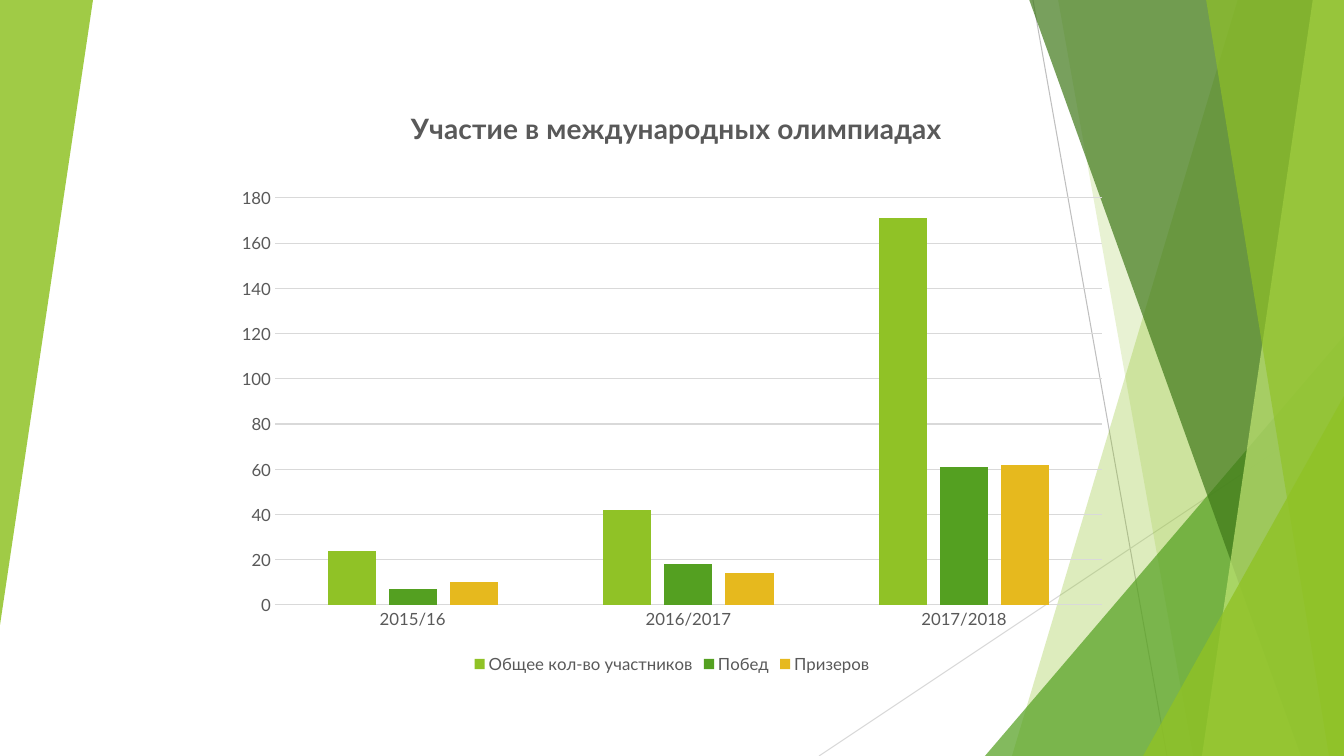
from lxml.etree import SubElement
from pptx import Presentation
from pptx.chart.data import CategoryChartData
from pptx.dml.color import RGBColor
from pptx.enum.chart import XL_CHART_TYPE, XL_LEGEND_POSITION, XL_TICK_MARK
from pptx.enum.shapes import MSO_CONNECTOR, MSO_SHAPE
from pptx.oxml.ns import qn
from pptx.util import Pt

TITLE = "Участие в международных олимпиадах"
YEARS = ["2015/16", "2016/2017", "2017/2018"]
SERIES = [
    ("Общее кол-во участников", "lime", [24, 42, 171]),
    ("Побед", "green", [7, 18, 61]),
    ("Призеров", "gold", [10, 14, 62]),
]
COLORS = {
    "lime": "90C226", "green": "54A021", "gold": "E6B91E",
    "forest": "3F7819", "pale": "C0E474", "text": "595959",
    "grid": "D9D9D9", "ray": "BFBFBF",
}
FONT = "Lato"
WIDTH, HEIGHT = 1344, 756
SCALE = 12192000 / WIDTH

RAYS = [((1033, 0), (1167, HEIGHT), "ray"), ((WIDTH, 406), (819, HEIGHT), "grid")]
FACETS = [
    ("band", (1238, 1012), "lime", 30),
    ("band", (1058, 1193), "lime", 20),
    ("triangle", (985, 336, 359, 420, 0), "green", 72),
    ("band", (1029, 1301), "forest", 70),
    ("band", (1313, 1202), "pale", 70),
    ("band", (1206, 1329), "lime", 65),
    ("triangle", (1143, 396, 201, 360, 0), "lime", 80),
    ("triangle", (0, 0, 93, 625, 180), "lime", 85),
]
CHART_BOX = (224, 80, 896, 598)
PLOT_BOX = (275, 198, 827, 407)
TITLE_CORNER = (406, 103)


def emu(*lengths):
    return [round(length * SCALE) for length in lengths]


def color(name):
    return RGBColor.from_string(COLORS[name])


def style_font(font, size=12, bold=False):
    font.name, font.size, font.bold = FONT, Pt(size), bold
    font.color.rgb = color("text")


def write_text(frame, text, **style):
    span = frame.paragraphs[0].add_run()
    span.text = text
    style_font(span.font, **style)


def style_line(line, name):
    line.color.rgb = color(name)
    line.width = Pt(0.75)


def add_ray(page, start, end, name):
    ray = page.shapes.add_connector(MSO_CONNECTOR.STRAIGHT, *emu(*start, *end))
    style_line(ray.line, name)
    SubElement(ray._element.spPr, qn("a:effectLst"))


def add_facet(page, kind, geometry, name, opacity):
    if kind == "band":
        top, bottom = geometry
        builder = page.shapes.build_freeform(top, -1, scale=SCALE)
        builder.add_line_segments([(WIDTH, -1), (WIDTH, HEIGHT), (bottom, HEIGHT)])
        facet = builder.convert_to_shape()
    else:
        *box, rotation = geometry
        facet = page.shapes.add_shape(MSO_SHAPE.ISOSCELES_TRIANGLE, *emu(*box))
        facet.adjustments[0] = 1
        facet.rotation = rotation
    facet.shadow.inherit = False
    facet.line.fill.background()
    facet.fill.solid()
    facet.fill.fore_color.rgb = color(name)
    tint = facet._element.spPr.find(qn("a:solidFill"))[0]
    SubElement(tint, qn("a:alpha"), val=str(opacity * 1000))


def place(element, position, inner=False):
    left, top, width, height = CHART_BOX
    layout = element.find(qn("c:layout"))
    if layout is None:
        layout = element.makeelement(qn("c:layout"))
        text = element.find(qn("c:tx"))
        element.insert(0 if text is None else 1, layout)
    manual = SubElement(layout, qn("c:manualLayout"))
    if inner:
        SubElement(manual, qn("c:layoutTarget"), val="inner")
    for mode in ("xMode", "yMode"):
        SubElement(manual, qn(f"c:{mode}"), val="edge")
    x, y, *size = position
    shares = [(x - left) / width, (y - top) / height]
    shares += [length / whole for length, whole in zip(size, (width, height))]
    for tag, share in zip("xywh", shares):
        SubElement(manual, qn(f"c:{tag}"), val=f"{share:.4f}")


def add_olympiad_chart(page):
    data = CategoryChartData()
    data.categories = YEARS
    for label, _, values in SERIES:
        data.add_series(label, values)
    chart = page.shapes.add_chart(
        XL_CHART_TYPE.COLUMN_CLUSTERED, *emu(*CHART_BOX), data).chart
    style_font(chart.font)
    chart.has_title = True
    write_text(chart.chart_title.text_frame, TITLE, size=20, bold=True)
    chart.chart_title.include_in_layout = False
    place(chart.chart_title._element, TITLE_CORNER)

    plot = chart.plots[0]
    plot.gap_width, plot.overlap, plot.vary_by_categories = 219, -27, False
    for series, (_, name, _) in zip(plot.series, SERIES):
        series.format.fill.solid()
        series.format.fill.fore_color.rgb = color(name)
    place(chart._chartSpace.chart.plotArea, PLOT_BOX, inner=True)

    for axis in (chart.category_axis, chart.value_axis):
        axis.major_tick_mark = axis.minor_tick_mark = XL_TICK_MARK.NONE
        style_font(axis.tick_labels.font)
    style_line(chart.category_axis.format.line, "grid")
    values = chart.value_axis
    values.minimum_scale, values.maximum_scale, values.major_unit = 0, 180, 20
    values.format.line.fill.background()
    style_line(values.major_gridlines.format.line, "grid")

    chart.has_legend = True
    chart.legend.position = XL_LEGEND_POSITION.BOTTOM
    chart.legend.include_in_layout = False
    style_font(chart.legend.font)


def main():
    deck = Presentation()
    deck.slide_width, deck.slide_height = emu(WIDTH, HEIGHT)
    page = deck.slides.add_slide(deck.slide_layouts[6])
    for ray in RAYS:
        add_ray(page, *ray)
    for facet in FACETS:
        add_facet(page, *facet)
    add_olympiad_chart(page)
    deck.save("out.pptx")


if __name__ == "__main__":
    main()
